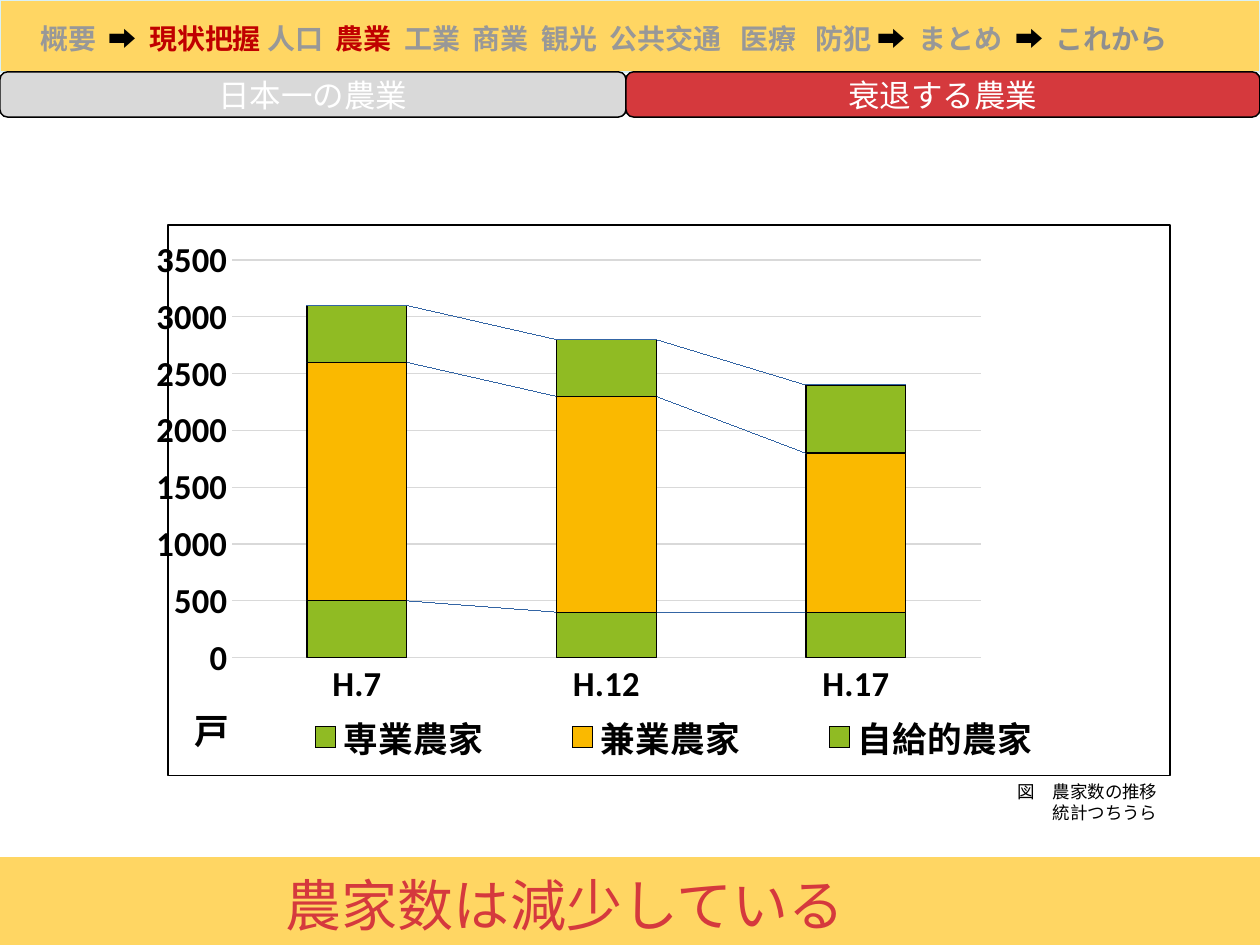
"""Build the slide on the falling number of farm households."""
from lxml import etree
from pptx import Presentation
from pptx.chart.data import CategoryChartData
from pptx.dml.color import RGBColor
from pptx.enum.chart import XL_CHART_TYPE, XL_LEGEND_POSITION, XL_TICK_MARK
from pptx.enum.shapes import MSO_SHAPE
from pptx.enum.text import MSO_ANCHOR, MSO_AUTO_SIZE, PP_ALIGN
from pptx.oxml import parse_xml
from pptx.oxml.ns import nsdecls, qn
from pptx.util import Cm, Pt

RECTANGLE, ROUNDED = MSO_SHAPE.RECTANGLE, MSO_SHAPE.ROUNDED_RECTANGLE
LEFT, CENTER, RIGHT = PP_ALIGN.LEFT, PP_ALIGN.CENTER, PP_ALIGN.RIGHT
TOP, MIDDLE = MSO_ANCHOR.TOP, MSO_ANCHOR.MIDDLE
NO_TICK = XL_TICK_MARK.NONE

COLORS = {
    "band": "FFD663", "band_edge": "D9F1F6", "muted": "989898", "last": "8F8F8F",
    "active": "C00000", "black": "000000", "white": "FFFFFF", "tab": "D9D9D9",
    "red": "D5393D", "grid": "D9D9D9", "green": "90BB23", "orange": "FAB900",
    "link": "3465A4",
}
WIDTH, HEIGHT = 25.4, 19.05
BANDS = [((0, 0, WIDTH, 1.45), "band_edge"), ((0, 17.3, WIDTH, 1.75), "band")]
NAVIGATION = [
    ("概要  ", "muted"), ("➡  ", "black"), ("現状把握 ", "active"),
    ("人口  ", "muted"), ("農業", "active"),
    ("  工業  商業  観光  公共交通   医療   防犯 ", "muted"),
    ("➡  ", "black"), ("まとめ  ", "muted"), ("➡  ", "black"), ("これから", "last"),
]
TABS = [("日本一の農業", 12.62, "tab"), ("衰退する農業", 12.78, "red")]
CAPTION = ["図　農家数の推移", "統計つちうら"]
HEADLINE = "農家数は減少している"
YEARS = ["H.7", "H.12", "H.17"]
SERIES = [
    ("専業農家", (500, 400, 400), "green"),
    ("兼業農家", (2100, 1900, 1400), "orange"),
    ("自給的農家", (500, 500, 600), "green"),
]
UNIT = "戸"


def color(name):
    return RGBColor.from_string(COLORS[name])


def lengths(box):
    return [Cm(value) for value in box]


def style_font(font, size, name="black", bold=False, face="Calibri"):
    font.size, font.bold, font.name = Pt(size), bold, face
    font.color.rgb = color(name)


def style_line(line, name, width=0.75):
    line.color.rgb = color(name)
    line.width = Pt(width)


def add_panel(slide, kind, box, fill, edge):
    panel = slide.shapes.add_shape(kind, *lengths(box))
    panel.shadow.inherit = False
    panel.fill.solid()
    panel.fill.fore_color.rgb = color(fill)
    style_line(panel.line, edge, 0.85)
    return panel


def add_navigation(slide):
    box = slide.shapes.add_textbox(*lengths((0.56, 0.03, 24.84, 1.5)))
    frame = box.text_frame
    frame.word_wrap, frame.vertical_anchor = True, MIDDLE
    for words, name in NAVIGATION:
        span = frame.paragraphs[0].add_run()
        span.text = words
        style_font(span.font, 16, name, True)


def add_tabs(slide):
    left = 0
    for words, width, fill in TABS:
        tab = add_panel(slide, ROUNDED, (left, 1.45, width, 0.91), fill, "black")
        tab.text_frame.text = words
        tab.text_frame.vertical_anchor = MIDDLE
        para = tab.text_frame.paragraphs[0]
        para.alignment = CENTER
        style_font(para.runs[0].font, 18, "white")
        left += width


def add_caption(slide):
    box = slide.shapes.add_textbox(*lengths((19.69, 15.75, 4.5, 0.86)))
    frame = box.text_frame
    frame.word_wrap = True
    frame.margin_left = frame.margin_top = frame.margin_bottom = 0
    frame.margin_right = Cm(0.86)
    frame.text = "\n".join(CAPTION)
    for para in frame.paragraphs:
        para.alignment = RIGHT
        style_font(para.runs[0].font, 10, face="Times New Roman")


def set_layout(element, inner=False, **places):
    for old in element.findall(qn("c:layout")):
        element.remove(old)
    layout = parse_xml(f"<c:layout {nsdecls('c')}><c:manualLayout/></c:layout>")
    settings = {"layoutTarget": "inner"} if inner else {}
    settings.update(xMode="edge", yMode="edge", **places)
    for tag, value in settings.items():
        etree.SubElement(layout[0], qn(f"c:{tag}")).set("val", str(value))
    before = [child for child in element
              if child.tag in (qn("c:tx"), qn("c:legendPos"))]
    element.insert(len(before), layout)


def add_chart(slide):
    data = CategoryChartData()
    data.categories = YEARS
    for name, values, _ in SERIES:
        data.add_series(name, values)
    frame = slide.shapes.add_chart(
        XL_CHART_TYPE.COLUMN_STACKED, *lengths((3.15, 4.52, 20.45, 11.13)), data)
    chart = frame.chart
    chart.has_title = False
    style_font(chart.font, 20, bold=True)

    plot = chart.plots[0]
    plot.gap_width, plot.overlap = 150, 100
    plot.vary_by_categories = False
    for series, (_, _, fill) in zip(plot.series, SERIES):
        series.format.fill.solid()
        series.format.fill.fore_color.rgb = color(fill)
        style_line(series.format.line, "black")

    categories, values = chart.category_axis, chart.value_axis
    for axis in (categories, values):
        axis.major_tick_mark = axis.minor_tick_mark = NO_TICK
        style_font(axis.tick_labels.font, 20, bold=True)
    style_line(categories.format.line, "grid")
    values.format.line.fill.background()
    values.minimum_scale, values.maximum_scale, values.major_unit = 0, 3500, 500
    style_line(values.major_gridlines.format.line, "grid")
    title = values.axis_title
    title.text_frame.text = UNIT
    title.text_frame._txBody.bodyPr.set("rot", "0")
    style_font(title.text_frame.paragraphs[0].runs[0].font, 20, bold=True)

    chart.has_legend = True
    chart.legend.position = XL_LEGEND_POSITION.BOTTOM
    chart.legend.include_in_layout = False
    style_font(chart.legend.font, 20, bold=True)

    area = chart._chartSpace.chart.plotArea
    set_layout(area, True, x=0.064, y=0.064, w=0.747, h=0.722)
    set_layout(title._element, x=0.02, y=0.85)
    set_layout(chart.legend._element, x=0.07, y=0.88, w=0.87, h=0.1)
    add_line_format(chart, area)


def shape_format(fill, edge):
    filling = f'<a:solidFill><a:srgbClr val="{COLORS[fill]}"/></a:solidFill>' if fill else ""
    return (f'<c:spPr {nsdecls("c", "a")}>{filling}<a:ln w="9525"><a:solidFill>'
            f'<a:srgbClr val="{COLORS[edge]}"/></a:solidFill></a:ln></c:spPr>')


def add_line_format(chart, area):
    links = parse_xml(f"<c:serLines {nsdecls('c')}/>")
    links.append(parse_xml(shape_format(None, "link")))
    area.find(qn("c:barChart")).find(qn("c:overlap")).addnext(links)
    chart._chartSpace.chart.addnext(parse_xml(shape_format("white", "black")))


def place_headline(slide):
    title = slide.shapes.title
    title.left, title.top, title.width, title.height = lengths((5.51, 17.42, 11.91, 1.63))
    frame = title.text_frame
    frame.text = HEADLINE
    frame.word_wrap, frame.vertical_anchor = False, TOP
    frame.auto_size = MSO_AUTO_SIZE.SHAPE_TO_FIT_TEXT
    frame.paragraphs[0].alignment = LEFT
    style_font(frame.paragraphs[0].runs[0].font, 32, "red")
    slide.shapes._spTree.append(title._element)


def main():
    deck = Presentation()
    deck.slide_width, deck.slide_height = Cm(WIDTH), Cm(HEIGHT)
    slide = deck.slides.add_slide(deck.slide_layouts[5])
    for box, edge in BANDS:
        add_panel(slide, RECTANGLE, box, "band", edge)
    add_navigation(slide)
    add_tabs(slide)
    add_caption(slide)
    add_chart(slide)
    place_headline(slide)
    deck.save("out.pptx")


if __name__ == "__main__":
    main()
